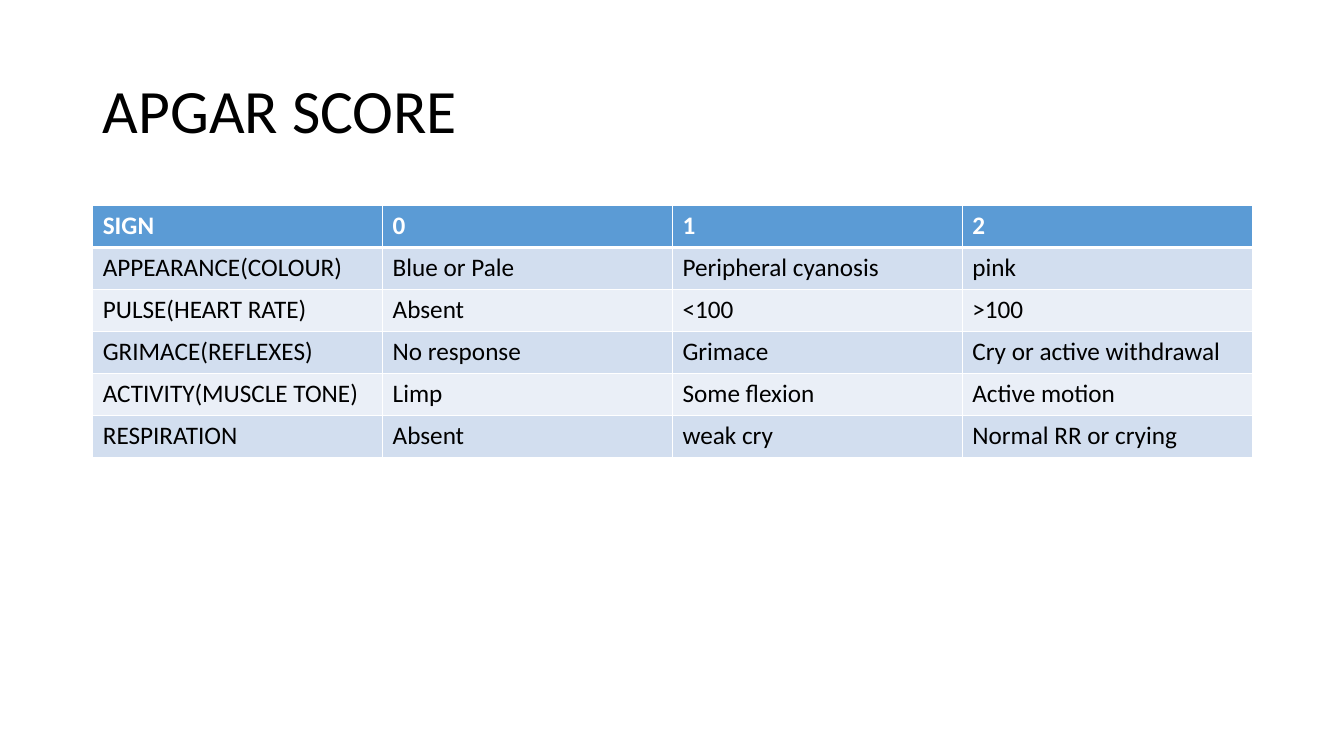
from lxml import etree
from pptx import Presentation
from pptx.dml.color import RGBColor
from pptx.enum.text import MSO_ANCHOR, PP_ALIGN
from pptx.oxml.ns import qn
from pptx.util import Inches, Pt

MIDDLE = MSO_ANCHOR.MIDDLE
LEFT = PP_ALIGN.LEFT
TITLE_ONLY = 5
FONT = "Calibri"
BLACK = RGBColor(0x00, 0x00, 0x00)
WHITE = RGBColor(0xFF, 0xFF, 0xFF)
HEADER_BLUE = RGBColor(0x5B, 0x9B, 0xD5)
BAND_DARK = RGBColor(0xD2, 0xDE, 0xEF)
BAND_LIGHT = RGBColor(0xEA, 0xEF, 0xF7)

SCORES = [
    ["SIGN", "0", "1", "2"],
    ["APPEARANCE(COLOUR)", "Blue or Pale", "Peripheral cyanosis", "pink"],
    ["PULSE(HEART RATE)", "Absent", "<100", ">100"],
    ["GRIMACE(REFLEXES)", "No response", "Grimace", "Cry or active withdrawal"],
    ["ACTIVITY(MUSCLE TONE)", "Limp", "Some flexion", "Active motion"],
    ["RESPIRATION", "Absent", "weak cry", "Normal RR or crying"],
]


def format_text(paragraph, size, color, bold=False):
    paragraph.alignment = LEFT
    for run in paragraph.runs:
        run.font.name = FONT
        run.font.size = Pt(size)
        run.font.bold = bold
        run.font.color.rgb = color


def set_borders(cell, widths):
    properties = cell._tc.get_or_add_tcPr()
    for side, width in widths.items():
        line = etree.SubElement(properties, qn(f"a:ln{side}"), w=str(Pt(width)))
        fill = etree.SubElement(line, qn("a:solidFill"))
        etree.SubElement(fill, qn("a:srgbClr"), val=str(WHITE))


def add_heading(slide, left, top, width, height):
    heading = slide.shapes.title
    heading.left, heading.top = left, top
    heading.width, heading.height = width, height
    frame = heading.text_frame
    frame.text = "APGAR SCORE"
    frame.word_wrap = True
    frame.vertical_anchor = MIDDLE
    frame.paragraphs[0].line_spacing = 0.9
    format_text(frame.paragraphs[0], 44, BLACK)


def add_score_table(slide, left, top, width, height):
    table = slide.shapes.add_table(
        len(SCORES), len(SCORES[0]), left, top, width, height
    ).table
    for row, entries in enumerate(SCORES):
        is_header = row == 0
        band = BAND_DARK if row % 2 else BAND_LIGHT
        widths = {"L": 1, "R": 1, "T": 3 if row == 1 else 1, "B": 3 if is_header else 1}
        for column, entry in enumerate(entries):
            cell = table.cell(row, column)
            cell.text_frame.text = entry
            set_borders(cell, widths)
            cell.fill.solid()
            cell.fill.fore_color.rgb = HEADER_BLUE if is_header else band
            format_text(
                cell.text_frame.paragraphs[0], 18, WHITE if is_header else BLACK, is_header
            )


def main():
    presentation = Presentation()
    presentation.slide_width = Inches(13.33)
    presentation.slide_height = Inches(7.5)
    slide = presentation.slides.add_slide(presentation.slide_layouts[TITLE_ONLY])
    left, width = Inches(0.92), Inches(11.5)
    add_heading(slide, left, Inches(0.4), width, Inches(1.45))
    add_score_table(slide, left, Inches(2.04), width, Inches(2.5))
    presentation.save("out.pptx")


if __name__ == "__main__":
    main()
